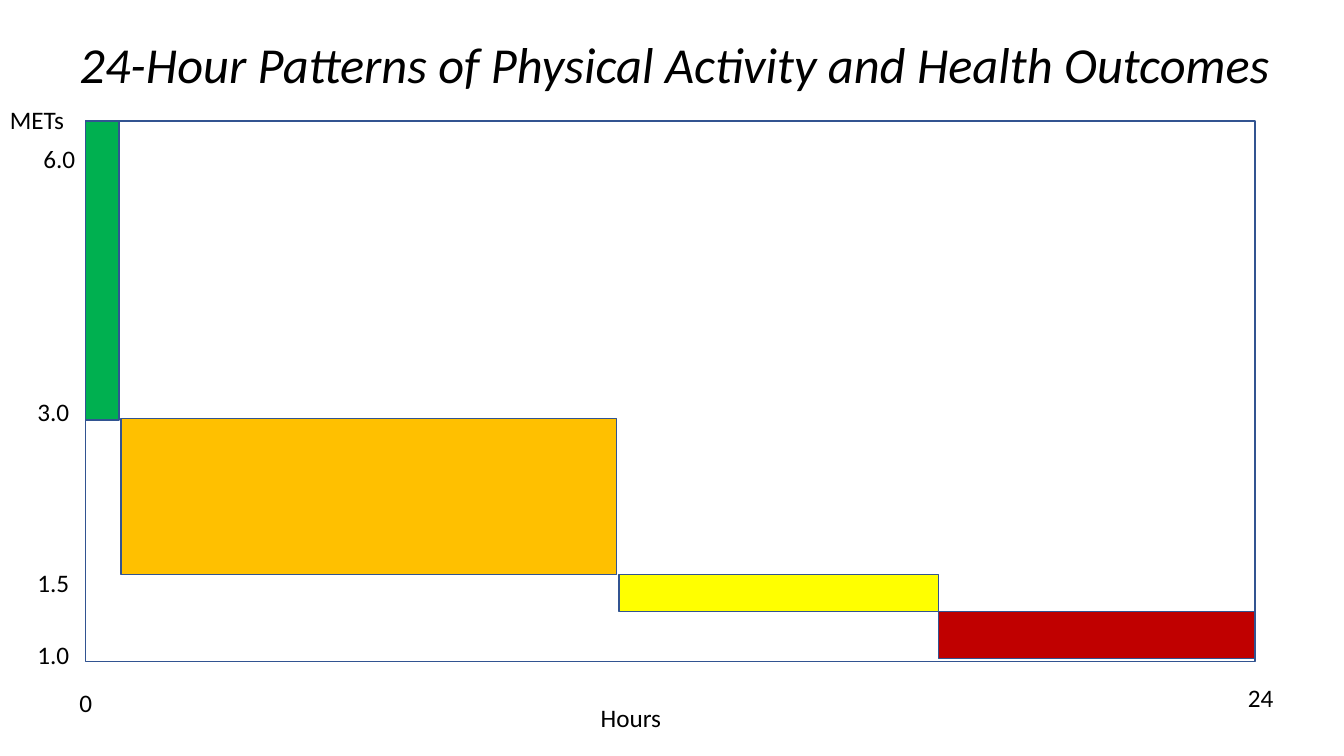
import pptx
import pptx.dml.color
import pptx.enum.shapes
import pptx.enum.text
import pptx.util

Pt = pptx.util.Pt
RGBColor = pptx.dml.color.RGBColor

BLACK = RGBColor(0x00, 0x00, 0x00)
OUTLINE = RGBColor(0x32, 0x54, 0x91)
GREEN = RGBColor(0x00, 0xB0, 0x50)
ORANGE = RGBColor(0xFF, 0xC0, 0x00)
YELLOW = RGBColor(0xFF, 0xFF, 0x00)
RED = RGBColor(0xC0, 0x00, 0x00)

prs = pptx.Presentation()
prs.slide_width, prs.slide_height = Pt(960), Pt(540)
s = prs.slides.add_slide(prs.slide_layouts[6])


def add_bar(left, top, width, height, color=None):
    sp = s.shapes.add_shape(pptx.enum.shapes.MSO_SHAPE.RECTANGLE,
                            Pt(left), Pt(top), Pt(width), Pt(height))
    sp.shadow.inherit = False
    if color is None:
        sp.fill.background()
    else:
        sp.fill.solid()
        sp.fill.fore_color.rgb = color
    sp.line.color.rgb = OUTLINE
    sp.line.width = Pt(1)


def add_label(text, left, top, width, height=29, size=18, italic=False):
    sp = s.shapes.add_textbox(Pt(left), Pt(top), Pt(width), Pt(height))
    tf = sp.text_frame
    tf.word_wrap = False
    tf.auto_size = pptx.enum.text.MSO_AUTO_SIZE.SHAPE_TO_FIT_TEXT
    r = tf.paragraphs[0].add_run()
    r.text = text
    font_format = {"name": "Calibri", "size": Pt(size), "italic": italic}
    for name, value in font_format.items():
        setattr(r.font, name, value)
    r.font.color.rgb = BLACK


# Plot frame, then the activity bands
for left, top, width, height, color in [
    (61.2, 86.4, 835.2, 386, None),
    (670.3, 437, 225.6, 33.2, RED),
    (442.1, 410.4, 228.2, 26.6, YELLOW),
    (61.2, 86.4, 23.8, 213.6, GREEN),
    (86.4, 298.8, 354.2, 111.6, ORANGE),
]:
    add_bar(left, top, width, height, color)

# MET axis
add_label("METs", 0, 70.7, 53.3)
for text, left, top in [
    ("6.0", 23.8, 98.8),
    ("3.0", 19.6, 279.6),
    ("1.5", 19.6, 401.8),
    ("1.0", 19.6, 453),
]:
    add_label(text, left, top, 37.4)

# Hour axis
add_label("0", 49.7, 487.4, 23.8)
add_label("24", 884.2, 483.8, 33.1)
add_label("Hours", 421.9, 498.4, 58.3)

# Title
add_label("24-Hour Patterns of Physical Activity and Health Outcomes",
          49.7, 20.2, 874.1, 51, size=36, italic=True)

prs.save("out.pptx")
